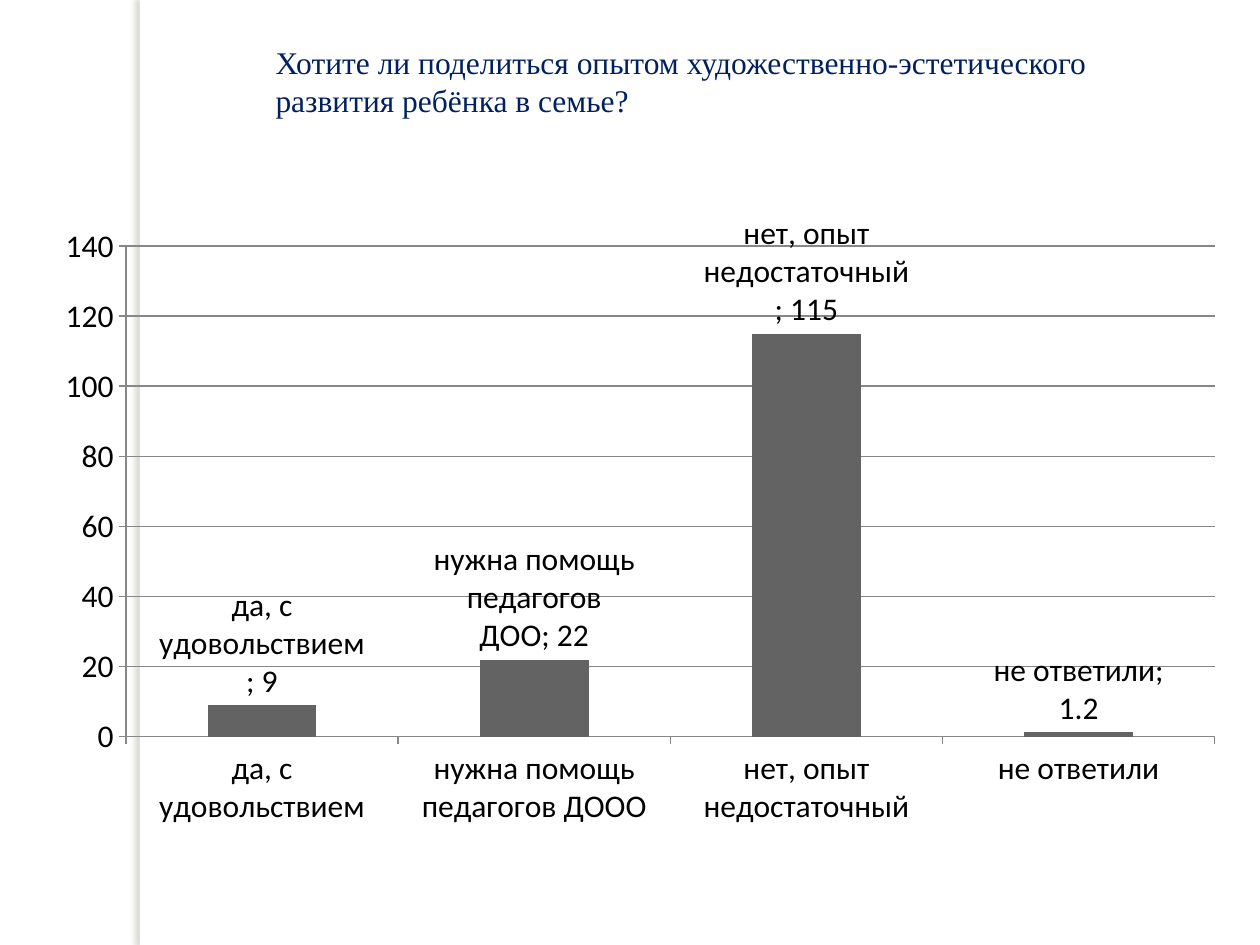
from dataclasses import dataclass

import lxml.etree
import pptx
import pptx.chart.data
import pptx.dml.color
import pptx.enum.chart
import pptx.enum.shapes
import pptx.enum.text
import pptx.oxml
import pptx.oxml.ns
import pptx.util
from pptx.util import Cm

TITLE = "Хотите ли поделиться опытом художественно-эстетического развития ребёнка в семье?"
ANSWERS = {
    "да, с удовольствием": 9,
    "нужна помощь педагогов ДООО": 22,
    "нет, опыт недостаточный": 115,
    "не ответили": 1.2,
}
CUSTOM_LABELS = {1: "нужна помощь педагогов ДОО; 22"}


@dataclass(frozen=True)
class Theme:
    title_font: str = "Times New Roman"
    chart_font: str = "Calibri"
    text_size: int = 18
    title_color: str = "002060"
    text_color: str = "000000"
    bar_color: str = "636363"
    line_color: str = "878787"
    strip_color: str = "FFFFFF"
    shadow_color: str = "736F63"


def rgb(value):
    return pptx.dml.color.RGBColor.from_string(value)


class SlideBuilder:
    """Adds elements in one theme to the current slide."""

    def __init__(self, slide, theme):
        self.slide = slide
        self.theme = theme

    def format_font(self, font, name, color):
        font.name = name
        font.size = pptx.util.Pt(self.theme.text_size)
        font.color.rgb = rgb(color)

    def add_strip(self, left, top, width, height):
        """Add the white edge strip that casts a soft shadow to the left."""
        shape = self.slide.shapes.add_shape(
            pptx.enum.shapes.MSO_SHAPE.RECTANGLE, left, top, width, height)
        shape.fill.solid()
        shape.fill.fore_color.rgb = rgb(self.theme.strip_color)
        shape.line.fill.background()
        shape.shadow.inherit = False
        effects = shape.element.spPr.find(pptx.oxml.ns.qn("a:effectLst"))
        shadow = lxml.etree.SubElement(
            effects, pptx.oxml.ns.qn("a:outerShdw"),
            blurRad=str(pptx.util.Pt(3)), dist=str(pptx.util.Pt(3)),
            dir=str(180 * 60000), algn="tl", rotWithShape="0")
        color = lxml.etree.SubElement(
            shadow, pptx.oxml.ns.qn("a:srgbClr"), val=self.theme.shadow_color)
        lxml.etree.SubElement(color, pptx.oxml.ns.qn("a:alpha"), val="25000")

    def set_title(self, text, left, top, width, height):
        title = self.slide.shapes.title
        title.left, title.top, title.width, title.height = left, top, width, height
        frame = title.text_frame
        frame.text = text
        frame.word_wrap = True
        frame.auto_size = pptx.enum.text.MSO_AUTO_SIZE.SHAPE_TO_FIT_TEXT
        frame.vertical_anchor = pptx.enum.text.MSO_ANCHOR.TOP
        paragraph = frame.paragraphs[0]
        paragraph.alignment = pptx.enum.text.PP_ALIGN.LEFT
        self.format_font(paragraph.runs[0].font, self.theme.title_font, self.theme.title_color)

    def add_column_chart(self, answers, custom_labels, left, top, width, height):
        data = pptx.chart.data.CategoryChartData()
        data.categories = list(answers)
        data.add_series("Series 1", list(answers.values()))
        chart = self.slide.shapes.add_chart(
            pptx.enum.chart.XL_CHART_TYPE.COLUMN_CLUSTERED,
            left, top, width, height, data).chart
        self.format_font(chart.font, self.theme.chart_font, self.theme.text_color)
        chart.has_title = False
        chart.has_legend = False
        self.format_axes(chart)

        plot = chart.plots[0]
        plot.gap_width = 150
        plot.vary_by_categories = False
        series = plot.series[0]
        series.format.fill.solid()
        series.format.fill.fore_color.rgb = rgb(self.theme.bar_color)
        self.format_labels(series, custom_labels)

    def format_axes(self, chart):
        for axis in (chart.category_axis, chart.value_axis):
            axis.major_tick_mark = pptx.enum.chart.XL_TICK_MARK.OUTSIDE
            axis.minor_tick_mark = pptx.enum.chart.XL_TICK_MARK.NONE
            axis.format.line.color.rgb = rgb(self.theme.line_color)
        axis = chart.value_axis
        axis.minimum_scale, axis.maximum_scale, axis.major_unit = 0, 140, 20
        axis.has_major_gridlines = True
        axis.major_gridlines.format.line.color.rgb = rgb(self.theme.line_color)

    def format_labels(self, series, custom_labels):
        outside = pptx.enum.chart.XL_LABEL_POSITION.OUTSIDE_END
        labels = series.data_labels
        labels.show_value = True
        labels.show_category_name = True
        labels.position = outside
        self.format_font(labels.font, self.theme.chart_font, self.theme.text_color)
        for index, text in custom_labels.items():
            label = series.points[index].data_label
            label.text_frame.text = text
            label.position = outside
            run = label.text_frame.paragraphs[0].runs[0]
            self.format_font(run.font, self.theme.chart_font, self.theme.text_color)


def main():
    presentation = pptx.Presentation()
    presentation.slide_width, presentation.slide_height = Cm(25.4), Cm(19.05)
    title_only = presentation.slide_layouts[5]
    builder = SlideBuilder(presentation.slides.add_slide(title_only), Theme())
    builder.add_strip(Cm(2.82), Cm(0), Cm(0.2), presentation.slide_height)
    builder.set_title(TITLE, Cm(5.3), Cm(0.74), Cm(18.4), Cm(1.8))
    builder.add_column_chart(
        ANSWERS, CUSTOM_LABELS, Cm(0.84), Cm(4.32), Cm(24.13), Cm(12.57))
    presentation.save("out.pptx")


if __name__ == "__main__":
    main()
